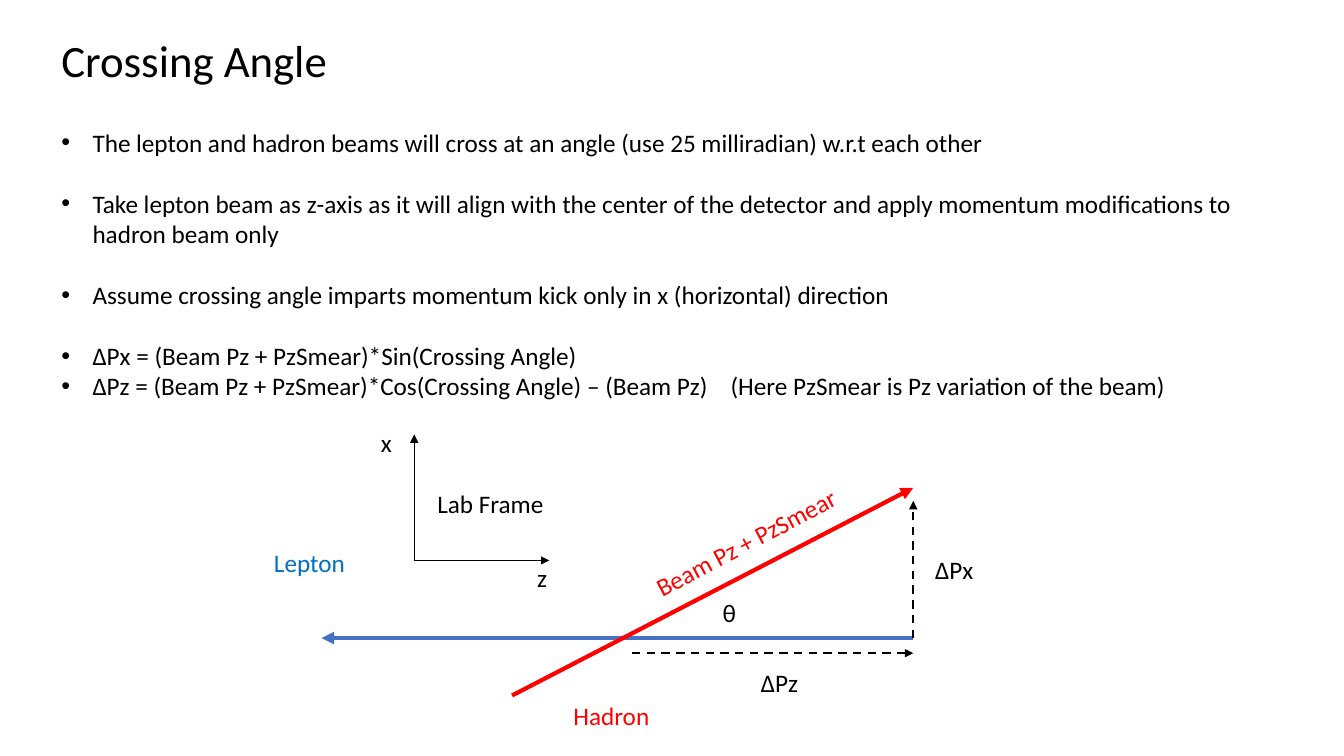
from lxml.etree import SubElement
from pptx import Presentation
from pptx.dml.color import RGBColor
from pptx.enum.dml import MSO_LINE
from pptx.enum.shapes import MSO_CONNECTOR
from pptx.oxml.ns import qn
from pptx.util import Inches, Pt

COLS, ROWS = 80, 45
BLACK, RED, BLUE, SKY = "000000", "FF0000", "4472C4", "0070C0"
LINE_H = 2.4


def color(code):
    return RGBColor.from_string(code)


class Board:
    """Holds the slide, its square grid and the shared text style."""

    font, size = "Calibri", 18

    def __init__(self, deck):
        self.slide = deck.slides.add_slide(deck.slide_layouts[6])
        self.cell = deck.slide_width / COLS

    def grid(self, *cells):
        return [round(cell * self.cell) for cell in cells]

    def text(self, lines, x, y, w, h=LINE_H, ink=BLACK, size=None, turn=0):
        box = self.slide.shapes.add_textbox(*self.grid(x, y, w, h))
        box.rotation = turn
        frame = box.text_frame
        frame.word_wrap = True
        frame.text = "\n".join(lines)
        for para in frame.paragraphs:
            para.font.name = self.font
            para.font.size = Pt(size or self.size)
            para.font.color.rgb = color(ink)
        return frame.paragraphs

    def bullets(self, items, x, y, w, h, gap, stop):
        """Bulleted list; gap follows all items but the last two."""
        paras = self.text(items, x, y, w, h)
        for para in paras:
            props = para._p.get_or_add_pPr()
            props.set("marL", str(Inches(0.31)))
            props.set("indent", str(-Inches(0.31)))
            SubElement(props, qn("a:buFont"), typeface="Arial")
            SubElement(props, qn("a:buChar"), char="•")
            tabs = SubElement(props, qn("a:tabLst"))
            SubElement(tabs, qn("a:tab"), pos=str(self.grid(stop)[0]), algn="l")
            # The schema puts the default run style last.
            props.append(props.find(qn("a:defRPr")))
        for para in paras[:-2]:
            para.space_after = Pt(gap)

    def arrow(self, start, end, ink=BLACK, width=1, dash=None):
        link = self.slide.shapes.add_connector(
            MSO_CONNECTOR.STRAIGHT, *self.grid(*start, *end))
        link.line.color.rgb = color(ink)
        link.line.width = Pt(width)
        if dash:
            link.line.dash_style = dash
        SubElement(link.line._get_or_add_ln(), qn("a:tailEnd"), type="triangle")
        SubElement(link._element.spPr, qn("a:effectLst"))


def main():
    deck = Presentation()
    deck.slide_width, deck.slide_height = Inches(COLS / 6), Inches(ROWS / 6)
    board = Board(deck)

    left = 3.06
    board.text(["Crossing Angle"], left, 1.68, 55.14, 3.84, size=32)
    board.bullets([
        "The lepton and hadron beams will cross at an angle (use 25 milliradian) w.r.t each other",
        "Take lepton beam as z-axis as it will align with the center of the detector "
        "and apply momentum modifications to hadron beam only",
        "Assume crossing angle imparts momentum kick only in x (horizontal) direction",
        "ΔPx = (Beam Pz + PzSmear)*Sin(Crossing Angle)",
        "ΔPz = (Beam Pz + PzSmear)*Cos(Crossing Angle) – (Beam Pz)\t"
        "(Here PzSmear is Pz variation of the beam)",
    ], left, 7.26, 72, 16.98, gap=22, stop=39.84)

    # Beams and their momentum components share the right edge
    right, beam = 54.36, 37.98
    board.arrow((right, beam), (19.14, beam), BLUE, 3)
    board.arrow((30.48, 41.4), (right, 29.04), RED, 3)
    board.arrow((right, beam), (right, 29.82), width=1.5, dash=MSO_LINE.DASH)
    board.arrow((37.62, 38.88), (right, 38.88), width=1.5, dash=MSO_LINE.DASH)

    # Lab frame axes
    origin = ox, oy = 24.66, 33.36
    board.arrow(origin, (32.7, oy))
    board.arrow(origin, (ox, 25.86))

    for word, x, y, w, ink, turn in [
        ("Lepton", 15.72, 32.28, 15.78, SKY, 0),
        ("Hadron", 33.54, 41.4, 13.08, RED, 0),
        ("x", 22.08, 25.14, 1.86, BLACK, 0),
        ("z", 31.38, 33.18, 1.86, BLACK, 0),
        ("θ", 42.42, 35.28, 1.86, BLACK, 0),
        ("Lab Frame", 25.44, 28.8, 8.22, BLACK, 0),
        ("Beam Pz + PzSmear", 37.86, 31.02, 13.32, RED, 332.2),
        ("ΔPx", 55.08, 32.7, 4.02, BLACK, 0),
        ("ΔPz", 44.7, 39.42, 4.02, BLACK, 0),
    ]:
        board.text([word], x, y, w, ink=ink, turn=turn)

    deck.save("out.pptx")


if __name__ == "__main__":
    main()
